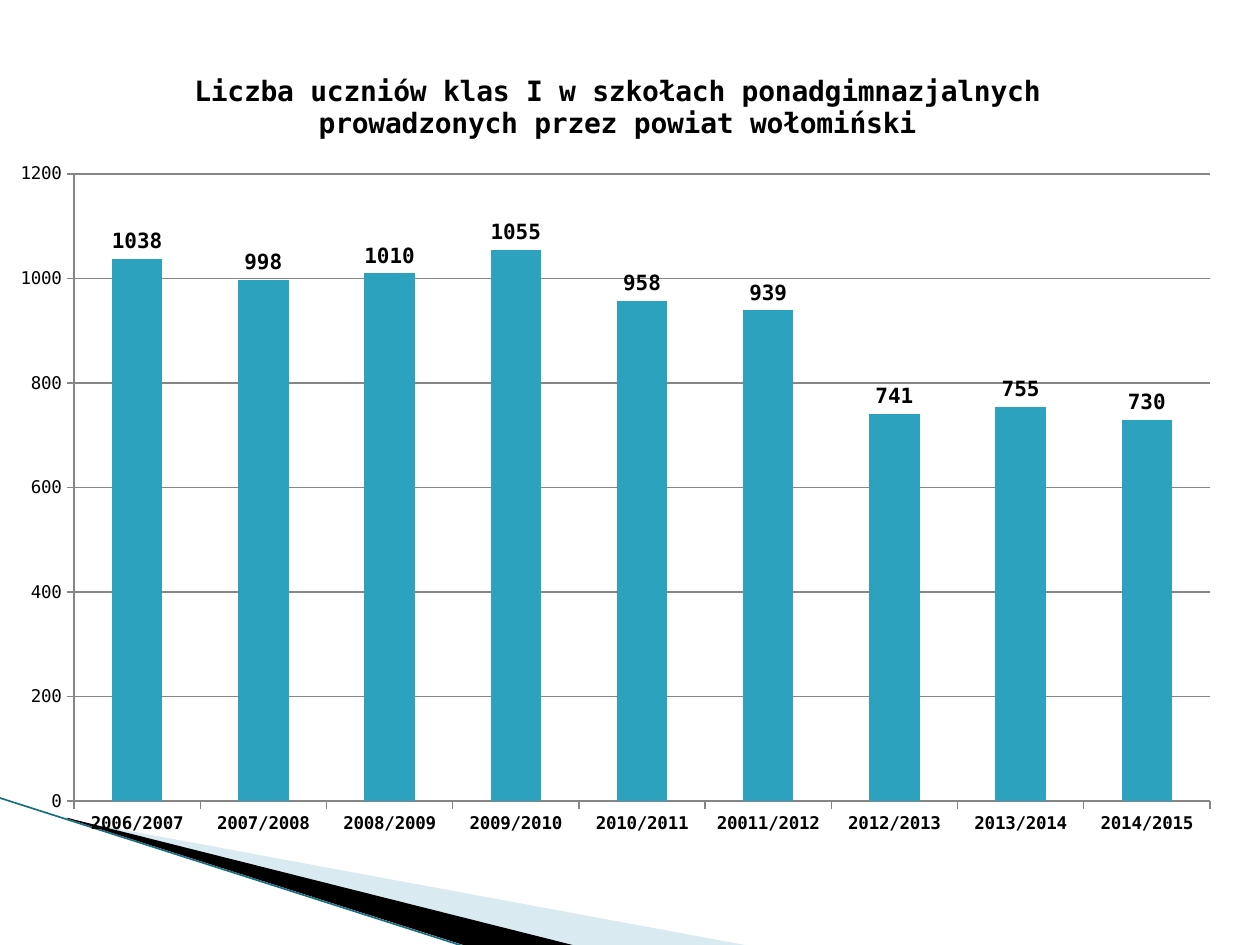
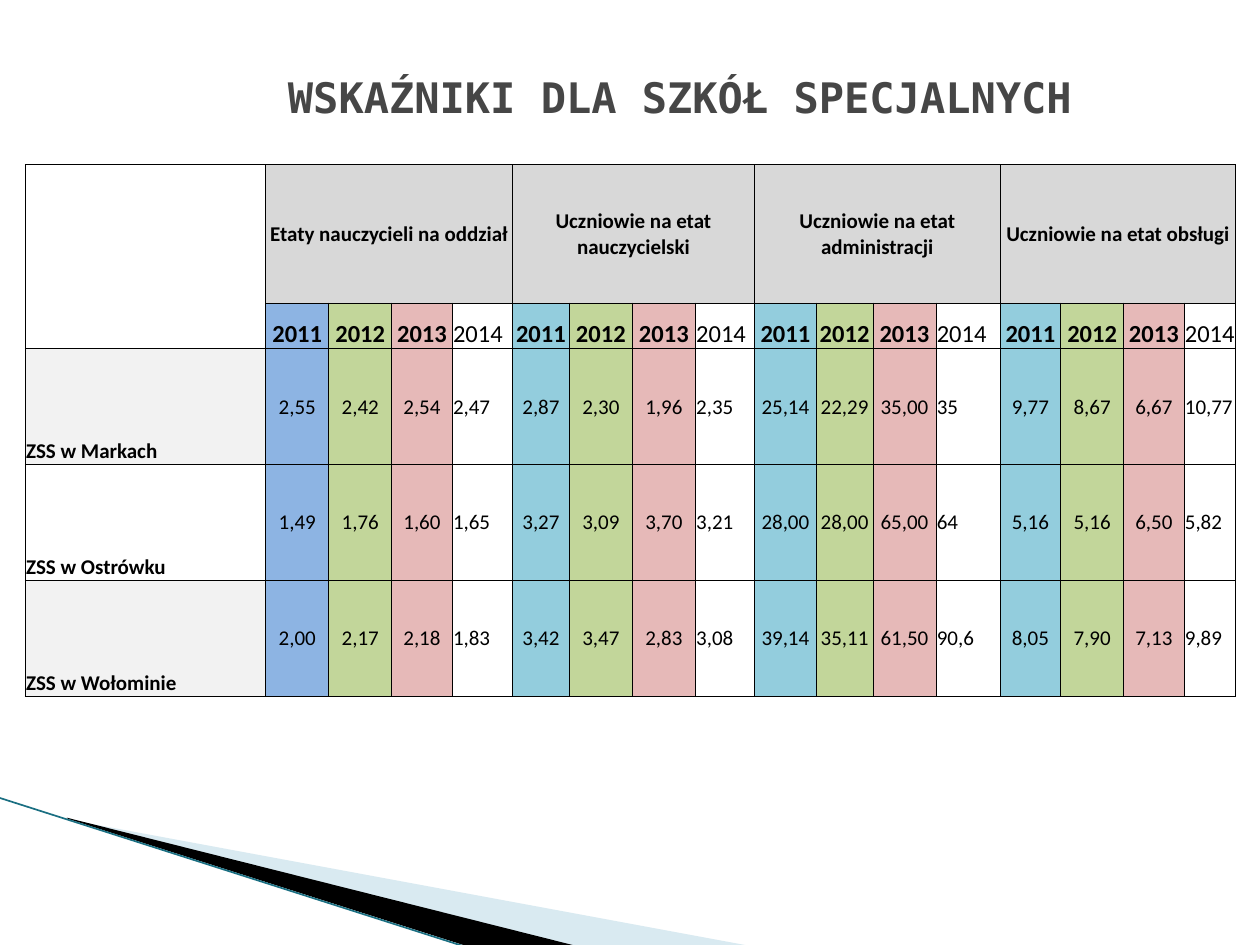
"""Builds two slides on school enrolment and special-school staffing indicators."""
from lxml.etree import SubElement
from pptx import Presentation
from pptx.chart.data import CategoryChartData
from pptx.dml.color import RGBColor
from pptx.enum.chart import XL_CHART_TYPE, XL_LABEL_POSITION, XL_TICK_MARK
from pptx.enum.shapes import MSO_CONNECTOR
from pptx.enum.text import MSO_ANCHOR, PP_ALIGN
from pptx.oxml import parse_xml
from pptx.oxml.ns import nsdecls, qn
from pptx.util import Pt

COLORS = {
    "text": "000000", "title": "464646", "bar": "2DA2BF", "axis": "868686",
    "sweep_light": "A0CBDC", "sweep_dark": "000000", "sweep_edge": "1A6F82",
    "header": "D8D8D8", "blue": "8DB4E3", "teal": "93CDDD", "green": "C2D69A",
    "rose": "E6B9B8", "gray": "F2F2F2", "white": "FFFFFF",
}
MONO = "DejaVu Sans Mono"
SANS = "Calibri"

ENROLMENT_TITLE = "Liczba uczniów klas I w szkołach ponadgimnazjalnych prowadzonych przez powiat wołomiński"
ENROLMENT = {
    "2006/2007": 1038, "2007/2008": 998, "2008/2009": 1010,
    "2009/2010": 1055, "2010/2011": 958, "20011/2012": 939,
    "2012/2013": 741, "2013/2014": 755, "2014/2015": 730,
}

INDICATORS = [
    "Etaty nauczycieli na oddział", "Uczniowie na etat nauczycielski",
    "Uczniowie na etat administracji", "Uczniowie na etat obsługi",
]
YEARS = ["2011", "2012", "2013", "2014"]
SCHOOLS = {
    "ZSS w Markach": "2,55 2,42 2,54 2,47 2,87 2,30 1,96 2,35 25,14 22,29 35,00 35 9,77 8,67 6,67 10,77",
    "ZSS w Ostrówku": "1,49 1,76 1,60 1,65 3,27 3,09 3,70 3,21 28,00 28,00 65,00 64 5,16 5,16 6,50 5,82",
    "ZSS w Wołominie": "2,00 2,17 2,18 1,83 3,42 3,47 2,83 3,08 39,14 35,11 61,50 90,6 8,05 7,90 7,13 9,89",
}
COLUMN_WIDTHS = [137.5, 36, 36, 34.5, 34.5, 32.5, 36, 36, 33.8,
                 35.3, 32.4, 36, 36.7, 34.6, 36, 34.5, 29.6]
ROW_HEIGHTS = [79.2, 26, 66.2, 66.2, 66.2]


class Deck:
    """Holds the shared style and the current slide."""

    def __init__(self):
        self.prs = Presentation()
        self.prs.slide_width, self.prs.slide_height = Pt(720), Pt(540)
        self.slide = None

    def rgb(self, name):
        return RGBColor.from_string(COLORS[name])

    def style(self, font, face, size, bold=False, color="text"):
        font.name, font.size, font.bold = face, Pt(size), bold
        font.color.rgb = self.rgb(color)

    def add_slide(self):
        self.slide = self.prs.slides.add_slide(self.prs.slide_layouts[6])
        self.sweep([(39.6, 468.5), (428.4, 540.5), (328.3, 540.5), (39.6, 468)], "sweep_light", 40)
        self.sweep([(38.2, 467.3), (329, 540.5), (267.8, 541), (38.9, 468)], "sweep_dark")
        edge = self.slide.shapes.add_connector(
            MSO_CONNECTOR.STRAIGHT, Pt(-0.7), Pt(455.8), Pt(267.1), Pt(541.4))
        edge.line.color.rgb = self.rgb("sweep_edge")
        edge.line.width = Pt(0.95)
        SubElement(edge._element.spPr, qn("a:effectLst"))

    def sweep(self, points, color, opacity=100):
        corners = [(Pt(x), Pt(y)) for x, y in points]
        builder = self.slide.shapes.build_freeform(*corners[0])
        builder.add_line_segments(corners[1:])
        wedge = builder.convert_to_shape()
        wedge.shadow.inherit = False
        wedge.fill.solid()
        wedge.fill.fore_color.rgb = self.rgb(color)
        wedge.line.fill.background()
        if opacity < 100:
            tint = wedge._element.spPr.find(f"{qn('a:solidFill')}/{qn('a:srgbClr')}")
            SubElement(tint, qn("a:alpha"), val=str(opacity * 1000))

    def add_text(self, frame, text, face, size, bold=False, color="text", align=PP_ALIGN.CENTER):
        paragraph = frame.paragraphs[0]
        paragraph.alignment = align
        run = paragraph.add_run()
        run.text = text
        self.style(run.font, face, size, bold, color)

    def heading(self, text):
        frame = self.slide.shapes.add_textbox(Pt(105), Pt(36), Pt(567), Pt(58)).text_frame
        frame.word_wrap = True
        frame.margin_top = Pt(5)
        self.add_text(frame, text, MONO, 24, True, "title")

    def column_chart(self, title, values):
        data = CategoryChartData()
        data.categories = list(values)
        data.add_series("Series 1", list(values.values()))
        chart = self.slide.shapes.add_chart(
            XL_CHART_TYPE.COLUMN_CLUSTERED, Pt(0), Pt(26), Pt(705.6), Pt(459.4), data).chart
        self.style(chart.font, MONO, 10)
        chart.has_legend = False
        chart.has_title = True
        self.add_text(chart.chart_title.text_frame, title, MONO, 16, True)
        chart.chart_title.include_in_layout = False

        for axis in (chart.category_axis, chart.value_axis):
            axis.major_tick_mark = XL_TICK_MARK.OUTSIDE
            axis.format.line.color.rgb = self.rgb("axis")
            self.style(axis.tick_labels.font, MONO, 10)
        chart.category_axis.tick_labels.font.bold = True
        chart.value_axis.minimum_scale = 0
        chart.value_axis.maximum_scale = 1200
        chart.value_axis.major_unit = 200
        chart.value_axis.major_gridlines.format.line.color.rgb = self.rgb("axis")

        plot = chart.plots[0]
        plot.gap_width = 150
        plot.vary_by_categories = False
        bars = plot.series[0].format
        bars.fill.solid()
        bars.fill.fore_color.rgb = self.rgb("bar")
        plot.has_data_labels = True
        labels = plot.data_labels
        labels.show_value = True
        labels.position = XL_LABEL_POSITION.OUTSIDE_END
        self.style(labels.font, MONO, 12, True)
        self.place_plot(chart, x=0.06, y=0.16, w=0.92, h=0.78)

    def place_plot(self, chart, **box):
        area = chart._chartSpace.chart.plotArea
        for layout in area.findall(qn("c:layout")):
            area.remove(layout)
        modes = "".join(f'<c:{side}Mode val="edge"/>' for side in "xy")
        sizes = "".join(f'<c:{side} val="{share}"/>' for side, share in box.items())
        area.insert(0, parse_xml(
            f'<c:layout {nsdecls("c")}><c:manualLayout><c:layoutTarget val="inner"/>'
            f'{modes}{sizes}</c:manualLayout></c:layout>'))

    def table(self, left, top, widths, heights):
        grid = self.slide.shapes.add_table(
            len(heights), len(widths), Pt(left), Pt(top), Pt(sum(widths)), Pt(sum(heights))).table
        grid.first_row = grid.horz_banding = False
        for column, width in zip(grid.columns, widths):
            column.width = Pt(width)
        for row, height in zip(grid.rows, heights):
            row.height = Pt(height)
        for cell in grid.iter_cells():
            cell.margin_left = cell.margin_right = cell.margin_top = Pt(0.5)
            cell.margin_bottom = 0
            cell.fill.background()
            for index, side in enumerate("LRTB"):
                cell._tc.tcPr.insert(index, parse_xml(
                    f'<a:ln{side} {nsdecls("a")} w="{Pt(0.5)}"><a:solidFill>'
                    f'<a:srgbClr val="{COLORS["text"]}"/></a:solidFill></a:ln{side}>'))
        return grid

    def fill_cell(self, cell, text, fill=None, size=12, bold=False,
                  anchor=MSO_ANCHOR.MIDDLE, align=PP_ALIGN.CENTER):
        cell.vertical_anchor = anchor
        if fill:
            cell.fill.solid()
            cell.fill.fore_color.rgb = self.rgb(fill)
        self.add_text(cell.text_frame, text, SANS, size, bold, align=align)

    def indicator_table(self):
        grid = self.table(14.4, 94, COLUMN_WIDTHS, ROW_HEIGHTS)
        grid.cell(0, 0).merge(grid.cell(1, 0))
        year_count = len(YEARS)
        for group, indicator in enumerate(INDICATORS):
            first = 1 + group * year_count
            grid.cell(0, first).merge(grid.cell(0, first + year_count - 1))
            self.fill_cell(grid.cell(0, first), indicator, "header", bold=True)

        tints = ["blue", "green", "rose", None] + ["teal", "green", "rose", None] * 3
        aligns = [PP_ALIGN.CENTER if tint else PP_ALIGN.LEFT for tint in tints]
        for column, (year, tint, align) in enumerate(zip(YEARS * len(INDICATORS), tints, aligns), 1):
            self.fill_cell(grid.cell(1, column), year, tint, 14, bool(tint), MSO_ANCHOR.BOTTOM, align)
        for row, (school, figures) in enumerate(SCHOOLS.items(), 2):
            self.fill_cell(grid.cell(row, 0), school, "white" if row % 2 else "gray",
                           bold=True, anchor=MSO_ANCHOR.BOTTOM, align=PP_ALIGN.LEFT)
            for column, (figure, tint, align) in enumerate(zip(figures.split(), tints, aligns), 1):
                self.fill_cell(grid.cell(row, column), figure, tint, align=align)


def main():
    deck = Deck()
    deck.add_slide()
    deck.column_chart(ENROLMENT_TITLE, ENROLMENT)
    deck.add_slide()
    deck.heading("WSKAŹNIKI DLA SZKÓŁ SPECJALNYCH")
    deck.indicator_table()
    deck.prs.save("out.pptx")


if __name__ == "__main__":
    main()
